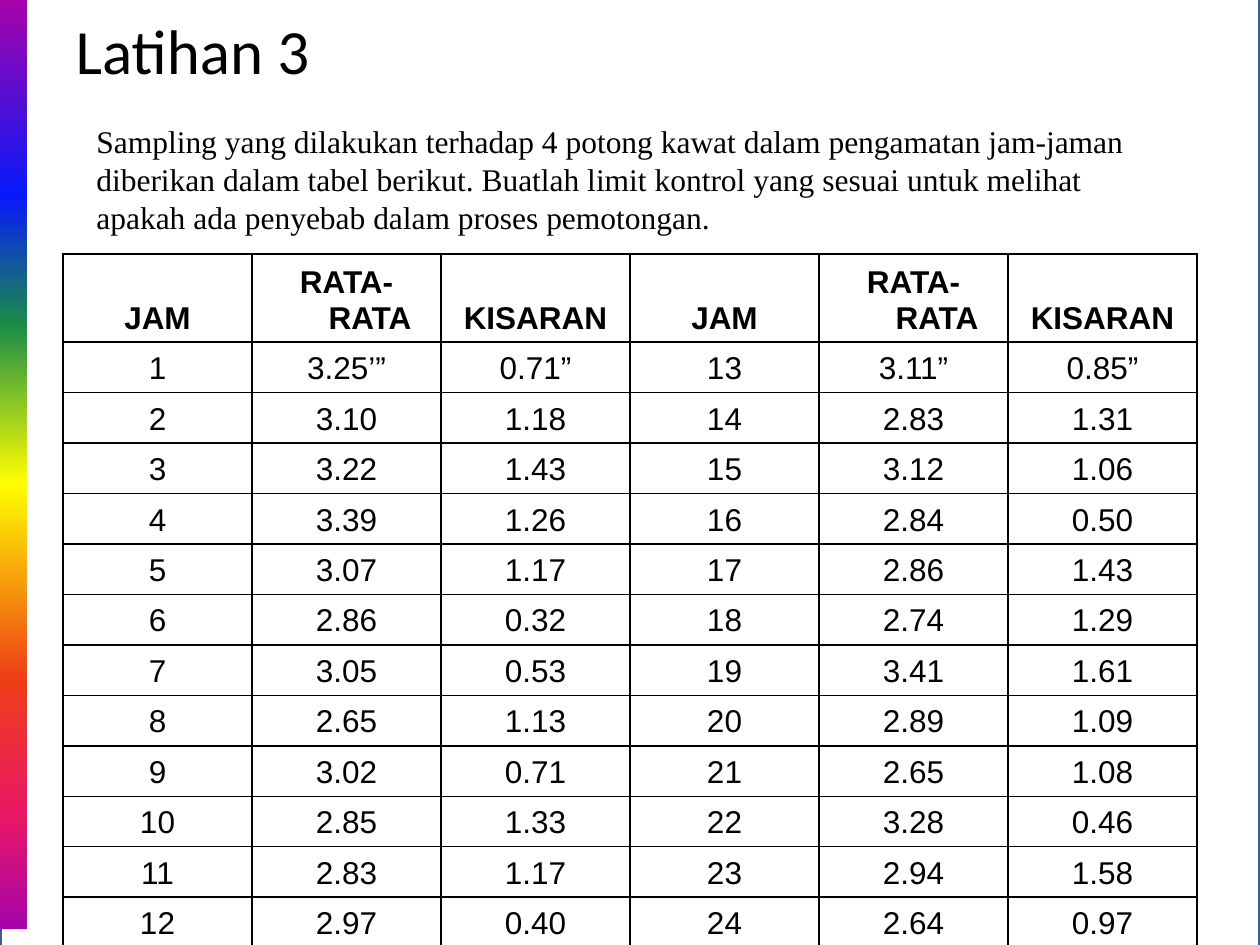
import dataclasses
import pptx
import pptx.dml.color
import pptx.enum.shapes
import pptx.enum.text
import pptx.oxml
import pptx.oxml.ns
import pptx.util

SCALE = 914400 / 126


@dataclasses.dataclass(frozen=True)
class Theme:
    ink: str = "000000"
    paper: str = "FFFFFF"
    edge: str = "3A5F8C"
    rainbow: tuple = ((0, "A603AB"), (21, "0819FB"), (35, "1A8D48"), (52, "FFFF00"),
                      (73, "EE3F17"), (88, "E81766"), (100, "A603AB"))
    head: tuple = ("Calibri", 36)
    prose: tuple = ("Times New Roman", 18)
    grid: tuple = ("Arial", 18)


THEME = Theme()
TITLE = "Latihan 3"
TASK = ("Sampling yang dilakukan terhadap 4 potong kawat dalam pengamatan jam-jaman "
        "diberikan dalam tabel berikut. Buatlah limit kontrol yang sesuai untuk melihat "
        "apakah ada penyebab dalam proses pemotongan.")
HEADS = ("JAM", "RATA-RATA", "KISARAN")
MEANS = ("3.25’” 3.10 3.22 3.39 3.07 2.86 3.05 2.65 3.02 2.85 2.83 2.97 "
         "3.11” 2.83 3.12 2.84 2.86 2.74 3.41 2.89 2.65 3.28 2.94 2.64").split()
SPANS = ("0.71” 1.18 1.43 1.26 1.17 0.32 0.53 1.13 0.71 1.33 1.17 0.40 "
         "0.85” 1.31 1.06 0.50 1.43 1.29 1.61 1.09 1.08 0.46 1.58 0.97").split()
HALF = len(MEANS) // 2


def px(n):
    return pptx.util.Emu(round(n * SCALE))


def rgb(code):
    return pptx.dml.color.RGBColor.from_string(code)


def xml(text):
    """Parse a fragment whose root tag is in the drawing namespace."""
    tag, rest = text.split(" ", 1)
    return pptx.oxml.parse_xml(f"{tag} {pptx.oxml.ns.nsdecls('a')} {rest}")


def style(para, face, bold=False):
    for run in para.runs:
        run.font.name, size = face
        run.font.size = pptx.util.Pt(size)
        run.font.bold = bold
        run.font.color.rgb = rgb(THEME.ink)


def panel(slide, box):
    rect = slide.shapes.add_shape(pptx.enum.shapes.MSO_SHAPE.RECTANGLE, *map(px, box))
    rect.shadow.inherit = False
    return rect


def sheet(slide, box):
    """Place the nearly opaque page with its thin edge."""
    page = panel(slide, box)
    page.fill.solid()
    page.fill.fore_color.rgb = rgb(THEME.paper)
    color = page.element.spPr.find(".//" + pptx.oxml.ns.qn("a:srgbClr"))
    color.append(xml('<a:alpha val="96000"/>'))
    page.line.color.rgb = rgb(THEME.edge)
    page.line.width = pptx.util.Pt(2)


def stripe(slide, box):
    """Place the rainbow bar, running from top to bottom."""
    bar = panel(slide, box)
    bar.line.fill.background()
    bar.fill.gradient()
    stops = "".join(f'<a:gs pos="{at * 1000}"><a:srgbClr val="{code}"/></a:gs>'
                    for at, code in THEME.rainbow)
    old = bar.element.spPr.find(pptx.oxml.ns.qn("a:gradFill"))
    new = xml(f'<a:gradFill rotWithShape="1"><a:gsLst>{stops}</a:gsLst>'
              '<a:lin ang="5400000" scaled="0"/></a:gradFill>')
    old.getparent().replace(old, new)


def title(slide, box):
    head = slide.shapes.title
    head.element.getparent().append(head.element)  # in front of the panels
    head.left, head.top, head.width, head.height = map(px, box)
    frame = head.text_frame
    frame.text = TITLE
    frame.vertical_anchor = pptx.enum.text.MSO_ANCHOR.MIDDLE
    frame.paragraphs[0].alignment = pptx.enum.text.PP_ALIGN.LEFT
    style(frame.paragraphs[0], THEME.head)


def task(slide, box):
    frame = slide.shapes.add_textbox(*map(px, box)).text_frame
    frame.word_wrap = True
    frame.text = TASK
    style(frame.paragraphs[0], THEME.prose)


def border(cell):
    props = cell._tc.get_or_add_tcPr()
    for i, side in enumerate(("lnL", "lnR", "lnT", "lnB")):
        props.insert(i, xml(f'<a:{side} w="12700"><a:solidFill><a:srgbClr val="{THEME.ink}"/>'
                            f'</a:solidFill></a:{side}>'))


def fill(cell, text, bold):
    cell.text = text
    cell.vertical_anchor = pptx.enum.text.MSO_ANCHOR.BOTTOM
    cell.fill.background()
    border(cell)
    para = cell.text_frame.paragraphs[0]
    para.alignment = pptx.enum.text.PP_ALIGN.CENTER
    props = para._p.get_or_add_pPr()
    props.set("marL", str(px(47)))
    props.set("indent", str(-px(47)))
    style(para, THEME.grid, bold)


def entry(hour):
    return [str(hour + 1), MEANS[hour], SPANS[hour]]


def grid(slide, box, top):
    """Place both halves of the day side by side; top is the header height."""
    rows = [HEADS * 2] + [entry(i) + entry(i + HALF) for i in range(HALF)]
    table = slide.shapes.add_table(len(rows), len(rows[0]), *map(px, box)).table
    table.first_row = table.horz_banding = False
    for col in table.columns:
        col.width = px(box[2] / len(rows[0]))
    for i, row in enumerate(rows):
        table.rows[i].height = px((box[3] - top) / HALF if i else top)
        for j, text in enumerate(row):
            fill(table.cell(i, j), text, bold=i == 0)


def main():
    deck = pptx.Presentation()
    deck.slide_width, deck.slide_height = px(1260), px(945)
    slide = deck.slides.add_slide(deck.slide_layouts[5])
    sheet(slide, (0, -14, 1260, 983))
    stripe(slide, (0, 0, 27, 929))
    title(slide, (63, 0, 357, 98))
    task(slide, (84, 116, 1092, 126))
    grid(slide, (63, 254, 1134, 693), top=88)
    deck.save("out.pptx")


if __name__ == "__main__":
    main()
